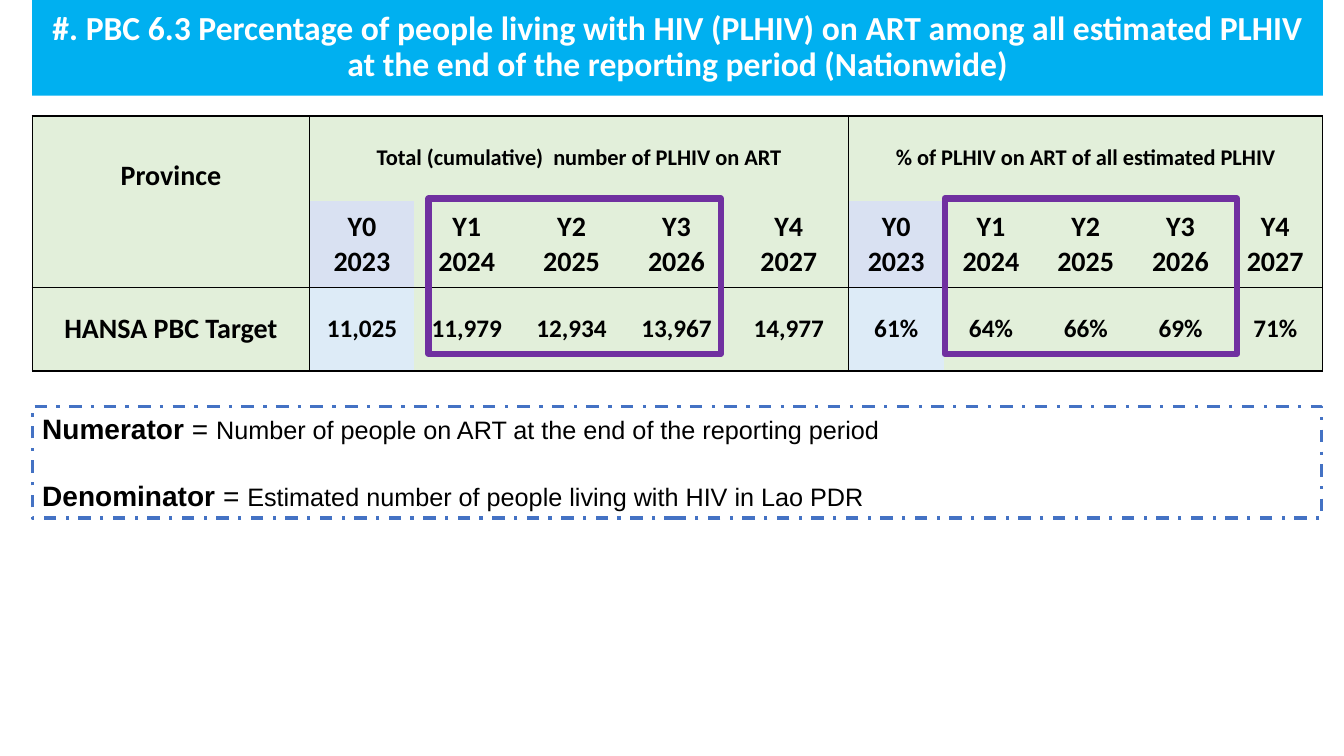
import pptx
import pptx.dml.color
import pptx.enum.dml
import pptx.enum.shapes
import pptx.enum.text
import pptx.oxml
import pptx.oxml.ns
import pptx.util

Inches = pptx.util.Inches
Pt = pptx.util.Pt
RECTANGLE = pptx.enum.shapes.MSO_SHAPE.RECTANGLE
MIDDLE = pptx.enum.text.MSO_ANCHOR.MIDDLE
TOP = pptx.enum.text.MSO_ANCHOR.TOP
CENTER = pptx.enum.text.PP_ALIGN.CENTER
LEFT = pptx.enum.text.PP_ALIGN.LEFT

COLORS = {
    "banner": "00B0F0", "green": "E2EFDA", "lavender": "D9E1F2", "pale_blue": "DDEBF7",
    "dash": "4472C4", "purple": "7030A0", "black": "000000", "white": "FFFFFF",
}


def set_font(font, name, size, color, bold):
    font.name = name
    font.size = Pt(size)
    font.bold = bold
    font.color.rgb = pptx.dml.color.RGBColor.from_string(COLORS[color])


def add_rectangle(left, top, width, height, fill=None, line=None, weight=0):
    shape = slide.shapes.add_shape(
        RECTANGLE, Inches(left), Inches(top), Inches(width), Inches(height))
    shape.shadow.inherit = False
    if fill:
        shape.fill.solid()
        shape.fill.fore_color.rgb = pptx.dml.color.RGBColor.from_string(COLORS[fill])
    else:
        shape.fill.background()
    if line:
        shape.line.color.rgb = pptx.dml.color.RGBColor.from_string(COLORS[line])
        shape.line.width = Pt(weight)
    else:
        shape.line.fill.background()
    return shape


presentation = pptx.Presentation()
presentation.slide_width = Inches(13.33)
presentation.slide_height = Inches(7.5)
slide = presentation.slides.add_slide(presentation.slide_layouts[6])

# Target table
years = ["Y0\v2023", "Y1\v2024", "Y2\v2025", "Y3\v2026", "Y4\v2027"]
rows = [
    ["Province", "Total (cumulative)  number of PLHIV on ART", "", "", "", "",
     "% of PLHIV on ART of all estimated PLHIV", "", "", "", ""],
    [""] + years * 2,
    ["HANSA PBC Target", "11,025", "11,979", "12,934", "13,967", "14,977",
     "61%", "64%", "66%", "69%", "71%"],
]
column_widths = [2.75] + [1.04] * 4 + [1.19] + [0.94] * 5
row_heights = [0.84, 0.86, 0.83]
row_sizes = [16, 20, 18]
baseline_fills = ["green", "lavender", "pale_blue"]
group_starts = (0, 1, 6)
group_ends = (0, 5, 10)

table = slide.shapes.add_table(
    len(rows), len(column_widths), Inches(0.32), Inches(1.15),
    Inches(sum(column_widths)), Inches(sum(row_heights))).table
table.first_row = False
table.horz_banding = False
for index, width in enumerate(column_widths):
    table.columns[index].width = Inches(width)
for index, height in enumerate(row_heights):
    table.rows[index].height = Inches(height)
table.cell(0, 0).merge(table.cell(1, 0))
table.cell(0, 1).merge(table.cell(0, 5))
table.cell(0, 6).merge(table.cell(0, 10))

for row, texts in enumerate(rows):
    for column, text in enumerate(texts):
        cell = table.cell(row, column)

        # Borders: a box around each group, a rule above the target row
        last_row = row + cell.span_height - 1
        last_column = column + cell.span_width - 1
        borders = {
            "lnL": column in group_starts, "lnR": last_column in group_ends,
            "lnT": row in (0, 2), "lnB": last_row in (1, 2),
        }
        properties = cell._tc.get_or_add_tcPr()
        for tag, visible in borders.items():
            paint = "<a:noFill/>"
            if visible:
                paint = f'<a:solidFill><a:srgbClr val="{COLORS["black"]}"/></a:solidFill>'
            properties.append(pptx.oxml.parse_xml(
                f'<a:{tag} w="12700" {pptx.oxml.ns.nsdecls("a")}>{paint}</a:{tag}>'))

        # Fill and text
        fill = baseline_fills[row] if column in (1, 6) else "green"
        cell.fill.solid()
        cell.fill.fore_color.rgb = pptx.dml.color.RGBColor.from_string(COLORS[fill])
        margin = Inches(0.01 if row == 1 else 0)
        cell.margin_left = cell.margin_right = cell.margin_top = margin
        cell.margin_bottom = 0
        cell.vertical_anchor = MIDDLE
        if text:
            cell.text = text
        paragraph = cell.text_frame.paragraphs[0]
        paragraph.alignment = CENTER
        set_font(paragraph.font, "Calibri", 20 if column == 0 else row_sizes[row], "black", True)

province = table.cell(0, 0)
province.vertical_anchor = TOP
province.margin_top = Inches(0.43)
province.margin_bottom = Inches(0.09)

# Title banner
banner = add_rectangle(0.32, 0, 12.8, 0.95, fill="banner")
banner.text_frame.word_wrap = True
banner.text_frame.vertical_anchor = MIDDLE
paragraph = banner.text_frame.paragraphs[0]
paragraph.text = ("#. PBC 6.3 Percentage of people living with HIV (PLHIV) on ART among all "
                  "estimated PLHIV at the end of the reporting period (Nationwide)")
paragraph.alignment = CENTER
paragraph.line_spacing = 0.9
set_font(paragraph.font, "Calibri", 24, "white", True)

# Definitions box
definitions = [
    ("Numerator", "Number of people on ART at the end of the reporting period"),
    ("Denominator", "Estimated number of people living with HIV in Lao PDR"),
]
box = add_rectangle(0.32, 4.03, 12.79, 1.11, line="dash", weight=2.25)
box.line.dash_style = pptx.enum.dml.MSO_LINE.DASH_DOT
frame = box.text_frame
frame.word_wrap = True
frame.vertical_anchor = TOP
for index, (term, meaning) in enumerate(definitions):
    paragraph = frame.add_paragraph() if index else frame.paragraphs[0]
    paragraph.alignment = LEFT
    paragraph.space_before = Pt(24 * index)
    for text, size, bold in [(term, 20, True), (" = ", 20, False), (meaning, 18, False)]:
        run = paragraph.add_run()
        run.text = text
        set_font(run.font, "Arial", size, "black", bold)

# Frames around Y1 to Y3
for left in (4.25, 9.37):
    add_rectangle(left, 1.97, 2.9, 1.54, line="purple", weight=4.5)

presentation.save("out.pptx")
